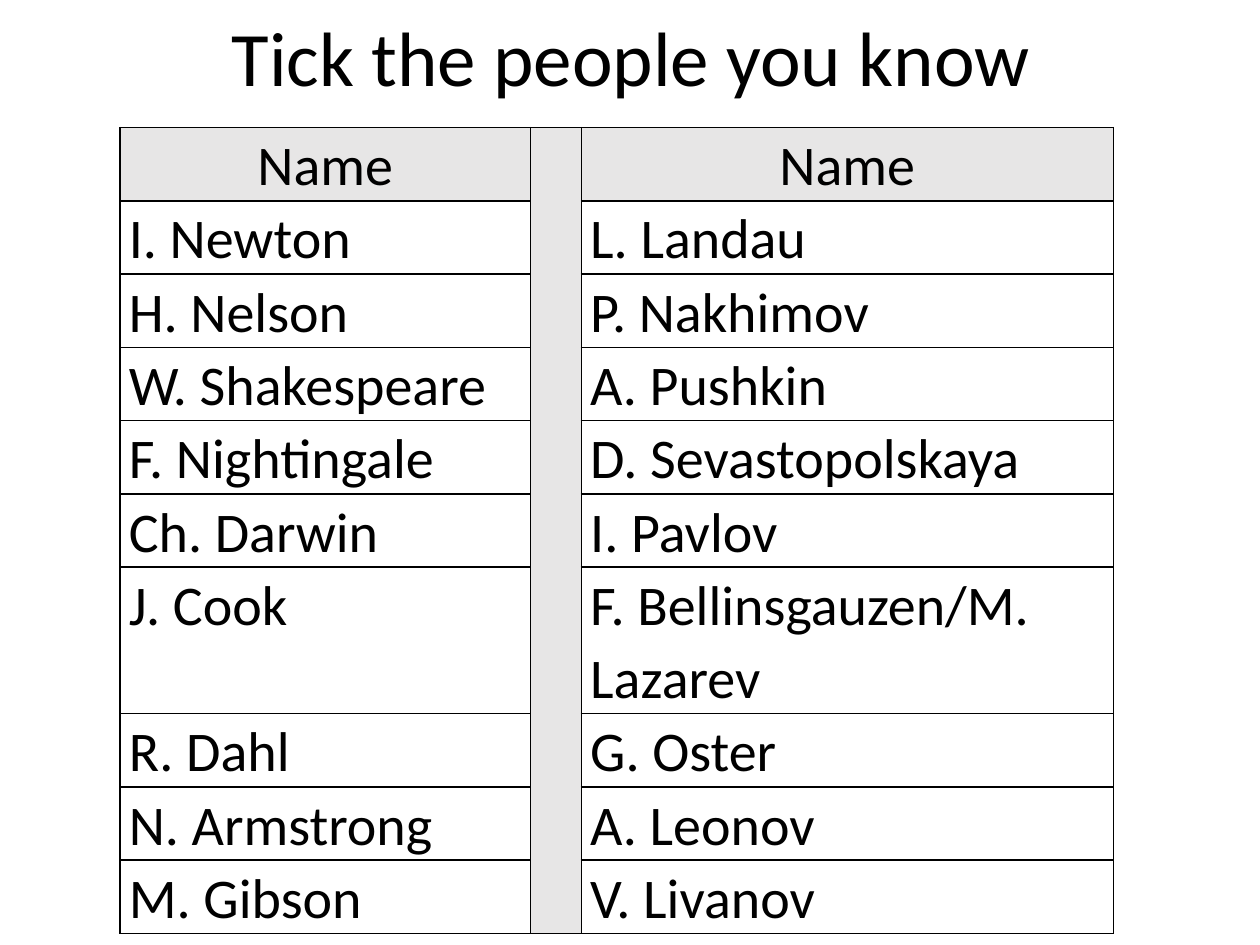
from dataclasses import dataclass

from lxml import etree
from pptx import Presentation
from pptx.dml.color import RGBColor
from pptx.enum.text import MSO_ANCHOR, PP_ALIGN
from pptx.oxml.ns import qn
from pptx.util import Pt

CENTER, LEFT = PP_ALIGN.CENTER, PP_ALIGN.LEFT
MIDDLE = MSO_ANCHOR.MIDDLE
TITLE_ONLY = 5

# Content
TITLE = "Tick the people you know"
HEADING = "Name"
PEOPLE = [
    ("I. Newton", "L. Landau"),
    ("H. Nelson", "P. Nakhimov"),
    ("W. Shakespeare", "A. Pushkin"),
    ("F. Nightingale", "D. Sevastopolskaya"),
    ("Ch. Darwin", "I. Pavlov"),
    ("J. Cook", "F. Bellinsgauzen/M. Lazarev"),
    ("R. Dahl", "G. Oster"),
    ("N. Armstrong", "A. Leonov"),
    ("M. Gibson", "V. Livanov"),
]
TALL_ROW = 6

# Geometry in points
TITLE_BOX = (50.4, -17.3, 620.6, 104.4)
TABLE_LEFT, TABLE_TOP = 68.5, 72.9
COLUMN_WIDTHS = [234.7, 29, 304]
ROW_HEIGHT, TALL_HEIGHT = 40.5, 82
SIDE_MARGIN = 5.1


@dataclass(frozen=True)
class Theme:
    font: str = "Calibri"
    title_size: int = 44
    cell_size: int = 32
    ink: str = "000000"
    shade: str = "E7E6E6"
    border: int = 1


THEME = Theme()


def write(frame, text, size, align, spacing):
    frame.word_wrap = True
    para = frame.paragraphs[0]
    para.text = text
    para.alignment = align
    para.line_spacing = spacing
    para.font.name = THEME.font
    para.font.size = Pt(size)
    para.font.color.rgb = RGBColor.from_string(THEME.ink)


def add_borders(cell):
    properties = cell._tc.get_or_add_tcPr()
    for side in ("a:lnL", "a:lnR", "a:lnT", "a:lnB"):
        line = etree.SubElement(properties, qn(side), w=str(Pt(THEME.border)))
        fill = etree.SubElement(line, qn("a:solidFill"))
        etree.SubElement(fill, qn("a:srgbClr"), val=THEME.ink)


def style_cell(cell, shaded):
    cell.margin_left = cell.margin_right = Pt(SIDE_MARGIN)
    cell.margin_top = cell.margin_bottom = 0
    add_borders(cell)
    if shaded:
        cell.fill.solid()
        cell.fill.fore_color.rgb = RGBColor.from_string(THEME.shade)
    else:
        cell.fill.background()


def add_people_table(slide):
    rows = [(HEADING, HEADING)] + PEOPLE
    heights = [TALL_HEIGHT if i == TALL_ROW else ROW_HEIGHT for i in range(len(rows))]
    frame = slide.shapes.add_table(
        len(rows), len(COLUMN_WIDTHS), Pt(TABLE_LEFT), Pt(TABLE_TOP),
        Pt(sum(COLUMN_WIDTHS)), Pt(sum(heights)))
    table = frame.table
    table.first_row = table.horz_banding = False
    for column, width in zip(table.columns, COLUMN_WIDTHS):
        column.width = Pt(width)
    for row, height in zip(table.rows, heights):
        row.height = Pt(height)

    for i, (left_name, right_name) in enumerate(rows):
        for j, name in enumerate((left_name, "", right_name)):
            cell = table.cell(i, j)
            style_cell(cell, shaded=i == 0 or j == 1)
            if name:
                align = CENTER if i == 0 else LEFT
                write(cell.text_frame, name, THEME.cell_size, align, 1.07)

    # Shaded divider down the middle
    table.cell(0, 1).merge(table.cell(len(rows) - 1, 1))


def main():
    deck = Presentation()
    deck.slide_width, deck.slide_height = Pt(720), Pt(540)
    slide = deck.slides.add_slide(deck.slide_layouts[TITLE_ONLY])

    # Title
    title = slide.shapes.title
    title.left, title.top, title.width, title.height = map(Pt, TITLE_BOX)
    title.text_frame.vertical_anchor = MIDDLE
    write(title.text_frame, TITLE, THEME.title_size, CENTER, 0.9)

    # Two lists of names
    add_people_table(slide)
    deck.save("out.pptx")


if __name__ == "__main__":
    main()
